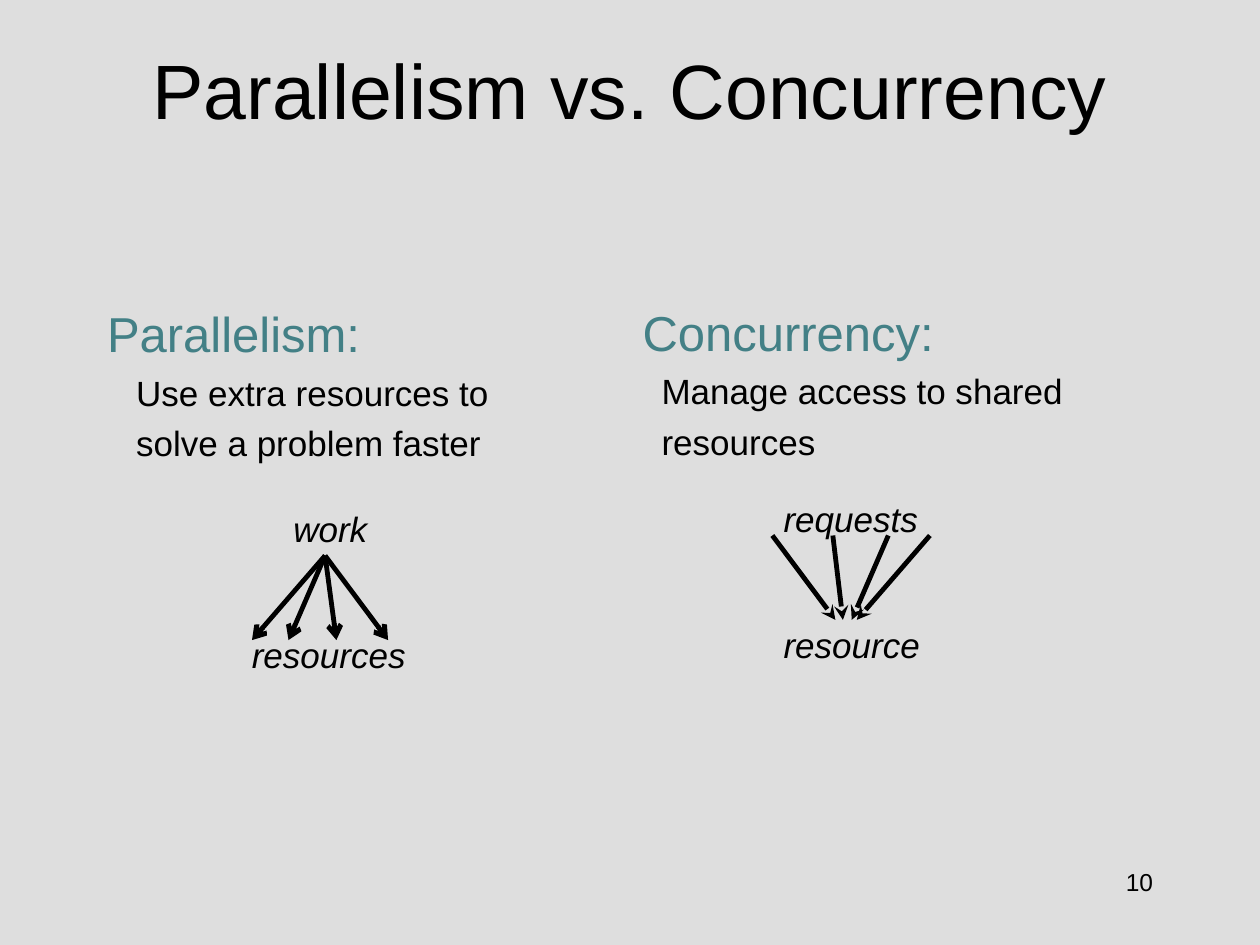
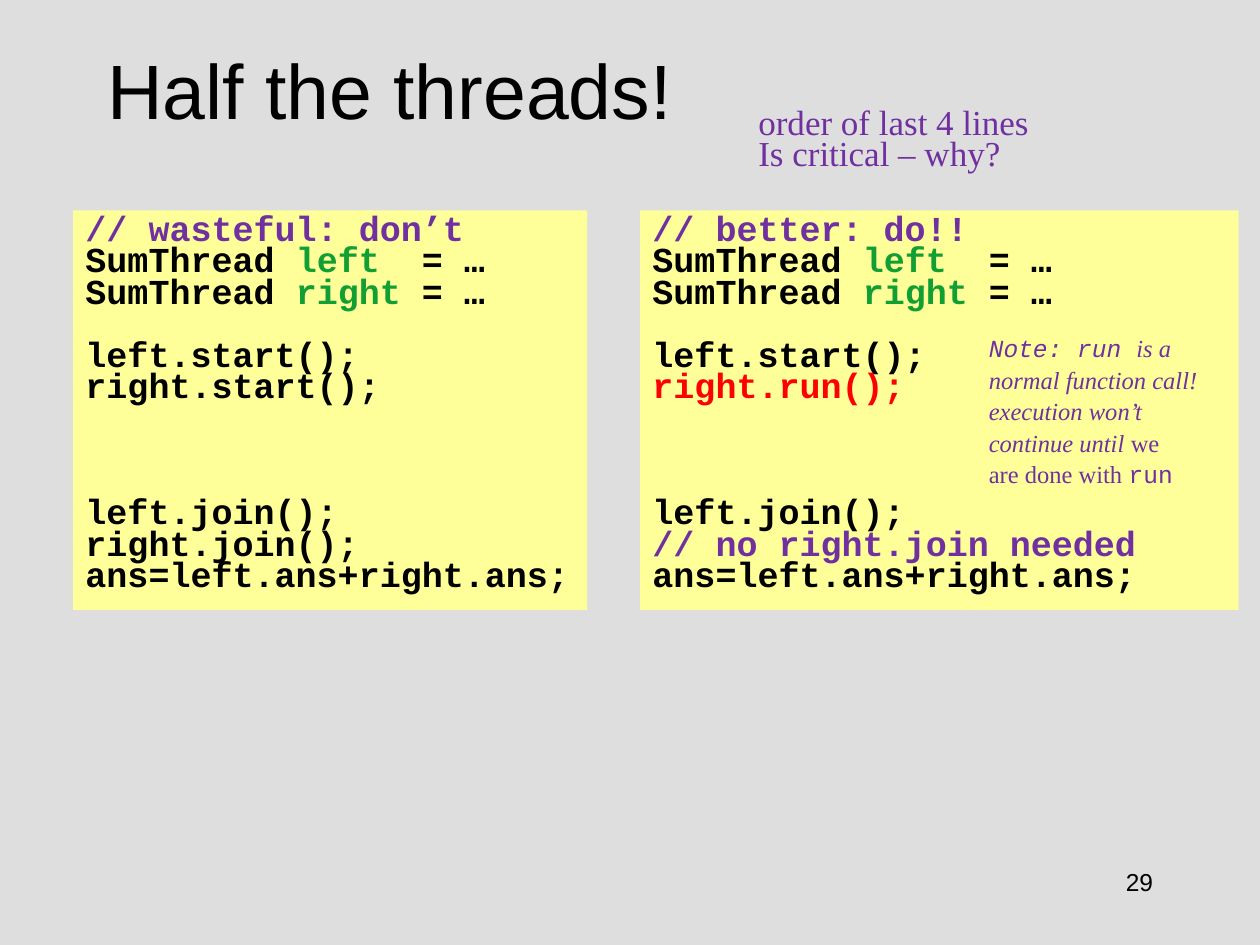
from lxml import etree
from pptx import Presentation
from pptx.dml.color import RGBColor
from pptx.enum.shapes import MSO_CONNECTOR, MSO_SHAPE
from pptx.enum.text import MSO_ANCHOR, MSO_AUTO_SIZE, PP_ALIGN
from pptx.oxml.ns import qn
from pptx.util import Inches, Pt

STRAIGHT = MSO_CONNECTOR.STRAIGHT
RECTANGLE = MSO_SHAPE.RECTANGLE
TOP, MIDDLE = MSO_ANCHOR.TOP, MSO_ANCHOR.MIDDLE
LEFT, CENTER, RIGHT = PP_ALIGN.LEFT, PP_ALIGN.CENTER, PP_ALIGN.RIGHT
NO_AUTOFIT = MSO_AUTO_SIZE.NONE

GRAY = RGBColor(0xDE, 0xDE, 0xDE)
BLACK = RGBColor(0, 0, 0)
TEAL = RGBColor(0x43, 0x80, 0x86)
YELLOW = RGBColor(0xFF, 0xFF, 0x99)
PURPLE = RGBColor(0x70, 0x30, 0xA0)
GREEN = RGBColor(0x11, 0x9F, 0x33)
RED = RGBColor(0xFF, 0, 0)

SANS, SERIF, MONO = "Arial", "Times New Roman", "Courier New"
TWO_CONTENT, TITLE_ONLY = 3, 5
LINE_PITCH = Pt(18)
BREAK = "\n"

# Each code line: blank lines above it, then its (text, colour) pieces
DECLARATIONS = [
    (0, [("SumThread ", BLACK), ("left", GREEN), ("\t= …", BLACK)]),
    (0, [("SumThread ", BLACK), ("right", GREEN), ("\t= …", BLACK)]),
    (1, [("left.start();", BLACK)]),
]
JOIN_LEFT = (3, [("left.join();", BLACK)])
ADD_ANSWERS = (0, [("ans=left.ans+right.ans;", BLACK)])
WASTEFUL_CODE = [
    (0, [("// wasteful: don’t", PURPLE)]),
    *DECLARATIONS,
    (0, [("right.start();", BLACK)]),
    JOIN_LEFT,
    (0, [("right.join();", BLACK)]),
    ADD_ANSWERS,
]
BETTER_CODE = [
    (0, [("// better: do!!", PURPLE)]),
    *DECLARATIONS,
    (0, [("right.run();", RED)]),
    JOIN_LEFT,
    (0, [("// no right.join needed", PURPLE)]),
    ADD_ANSWERS,
]


def place(shape, left, top, width, height):
    shape.left, shape.top = Inches(left), Inches(top)
    shape.width, shape.height = Inches(width), Inches(height)


def add_run(paragraph, text, size, color=BLACK, font=SANS, bold=False, italic=False):
    run = paragraph.add_run()
    run.text = text
    run.font.name = font
    run.font.size = Pt(size)
    run.font.color.rgb = color
    run.font.bold = bold
    run.font.italic = italic


def next_paragraph(text_frame, index):
    """Return the frame's first paragraph, or a new one after it."""
    return text_frame.add_paragraph() if index else text_frame.paragraphs[0]


def add_text_box(slide, left, top, width, height, wrap=False):
    box = slide.shapes.add_textbox(
        Inches(left), Inches(top), Inches(width), Inches(height))
    box.text_frame.word_wrap = wrap
    return box.text_frame


def add_slide(presentation, layout, title, align, number):
    """Add a slide with its title and slide number."""
    slide = presentation.slides.add_slide(presentation.slide_layouts[layout])
    place(slide.shapes.title, 0.75, 0.08, 8.5, 1.25)
    title_frame = slide.shapes.title.text_frame
    title_frame.vertical_anchor = MIDDLE
    title_frame.auto_size = NO_AUTOFIT
    title_frame.paragraphs[0].alignment = align
    add_run(title_frame.paragraphs[0], title, 44)

    paragraph = add_text_box(slide, 7.17, 6.83, 2.08, 0.5, True).paragraphs[0]
    paragraph.alignment = RIGHT
    add_run(paragraph, number, 14)
    return slide


def fill_definition(body, bounds, term, lines, indent):
    """Write a teal term with indented lines below it."""
    place(body, *bounds)
    body.text_frame.auto_size = NO_AUTOFIT
    for index, text in enumerate([term, *lines]):
        paragraph = next_paragraph(body.text_frame, index)
        paragraph.space_before = Pt(5)
        properties = paragraph._p.get_or_add_pPr()
        properties.set("marL", str(Inches(indent if index else 0)))
        properties.set("indent", "0")
        etree.SubElement(properties, qn("a:buNone"))
        if index:
            add_run(paragraph, text, 20)
        else:
            add_run(paragraph, text, 28, TEAL)


def add_label(slide, text, left, top, width):
    paragraph = add_text_box(slide, left, top, width, 0.44).paragraphs[0]
    add_run(paragraph, text, 20, italic=True)


def add_arrow(slide, start, end, head):
    arrow = slide.shapes.add_connector(
        STRAIGHT, *(Inches(value) for value in (*start, *end)))
    arrow.line.color.rgb = BLACK
    arrow.line.width = Pt(2.75)
    etree.SubElement(arrow.line._get_or_add_ln(), qn("a:tailEnd"), type=head)
    etree.SubElement(arrow._element.spPr, qn("a:effectLst"))


def add_code_panel(slide, left, width, code):
    panel = slide.shapes.add_shape(
        RECTANGLE, Inches(left), Inches(1.67), Inches(width), Inches(3.17))
    panel.shadow.inherit = False
    panel.fill.solid()
    panel.fill.fore_color.rgb = YELLOW
    panel.line.fill.background()
    text_frame = panel.text_frame
    text_frame.word_wrap = True
    text_frame.vertical_anchor = TOP
    for index, (blank_lines, pieces) in enumerate(code):
        paragraph = next_paragraph(text_frame, index)
        paragraph.alignment = LEFT
        paragraph.line_spacing = LINE_PITCH
        paragraph.space_before = LINE_PITCH * blank_lines
        tabs = etree.SubElement(paragraph._p.get_or_add_pPr(), qn("a:tabLst"))
        etree.SubElement(tabs, qn("a:tab"), pos=str(Inches(2.67)), algn="l")
        for text, color in pieces:
            add_run(paragraph, text, 20, color, MONO, bold=True)


def write_remark(text_frame, size, lines):
    """Write purple lines made of (text, font, italic) pieces."""
    for index, pieces in enumerate(lines):
        paragraph = next_paragraph(text_frame, index)
        paragraph.line_spacing = LINE_PITCH
        for text, font, italic in pieces:
            for part_index, part in enumerate(text.split(BREAK)):
                if part_index:
                    paragraph.add_line_break()
                add_run(paragraph, part, size, PURPLE, font, italic=italic)


def build_comparison_slide(presentation):
    slide = add_slide(presentation, TWO_CONTENT, "Parallelism vs. Concurrency",
                      CENTER, "10")
    fill_definition(slide.placeholders[1], (0.75, 2.36, 3.25, 1.05), "Parallelism:",
                    ["Use extra resources to", "solve a problem faster"], 0.23)
    fill_definition(slide.placeholders[2], (5, 2.35, 4.5, 1.15), "Concurrency:",
                    ["Manage access to shared", "resources"], 0.15)

    for resource_x in (2, 2.29, 2.67, 3.08):
        add_arrow(slide, (2.58, 4.41), (resource_x, 5.08), "arrow")
    add_label(slide, "work", 2.23, 3.98, 0.8)
    add_label(slide, "resources", 1.9, 4.98, 1.43)

    for request_x, resource_x in ((6.13, 6.63), (6.61, 6.69), (7.05, 6.76), (7.38, 6.8)):
        add_arrow(slide, (request_x, 4.25), (resource_x, 4.92), "stealth")
    add_label(slide, "requests", 6.12, 3.9, 1.28)
    add_label(slide, "resource", 6.12, 4.9, 1.29)


def build_threads_slide(presentation):
    slide = add_slide(presentation, TITLE_ONLY, "Half the threads!", LEFT, "29")
    add_code_panel(slide, 0.58, 4.08, WASTEFUL_CODE)
    add_code_panel(slide, 5.08, 4.75, BETTER_CODE)
    write_remark(add_text_box(slide, 5.92, 0.83, 2.57, 0.61), 20, [
        [("order of last 4 lines", SERIF, False)],
        [("Is critical – why?", SERIF, False)],
    ])
    write_remark(add_text_box(slide, 7.75, 2.58, 2, 1.36, True), 14, [
        [("Note: run ", MONO, True),
         ("is a normal function call!\nexecution won’t \ncontinue until ", SERIF, True),
         ("we", SERIF, False)],
        [("are done with ", SERIF, False), ("run", MONO, False)],
    ])


def main():
    presentation = Presentation()
    presentation.slide_width, presentation.slide_height = Inches(10), Inches(7.5)
    background = presentation.slide_master.background.fill
    background.solid()
    background.fore_color.rgb = GRAY
    build_comparison_slide(presentation)
    build_threads_slide(presentation)
    presentation.save("out.pptx")


if __name__ == "__main__":
    main()
